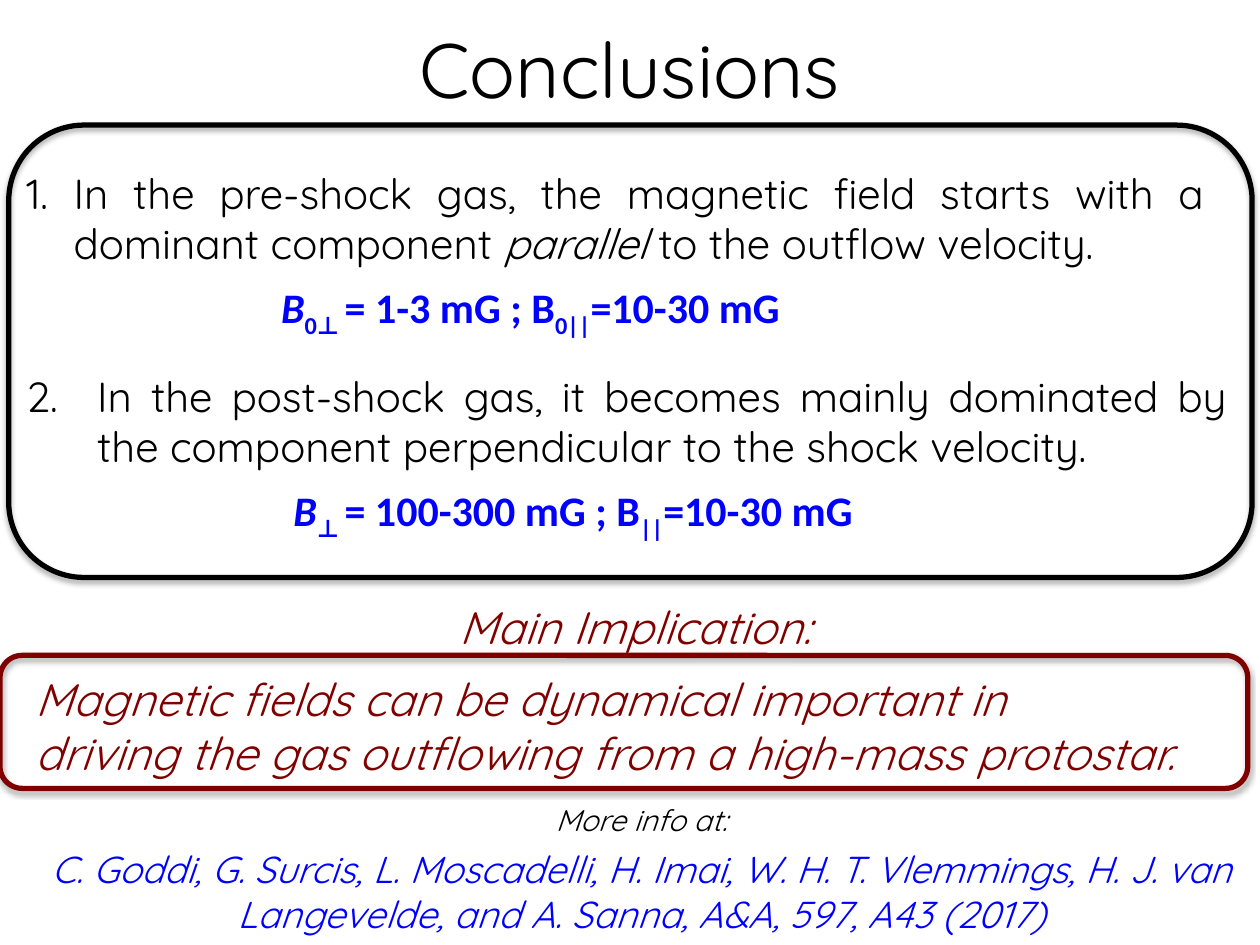
from lxml.etree import SubElement
from pptx import Presentation
from pptx.dml.color import RGBColor
from pptx.enum.shapes import MSO_SHAPE
from pptx.enum.text import MSO_ANCHOR, PP_ALIGN
from pptx.oxml import parse_xml
from pptx.oxml.ns import nsdecls, qn
from pptx.util import Pt

BLACK, BLUE, MAROON = "000000", "0000FF", "800000"


def color(value):
    return RGBColor.from_string(value)


def add_text(paragraph, text, size=24, font="Quicksand", fill=BLACK,
             bold=False, italic=False, subscript=False):
    run = paragraph.add_run()
    run.text = text
    run.font.size = Pt(size)
    run.font.name = font
    run.font.color.rgb = color(fill)
    run.font.bold = bold
    run.font.italic = italic
    if subscript:
        run.font._element.set("baseline", "-25000")


presentation = Presentation()
presentation.slide_width = Pt(720)
presentation.slide_height = Pt(540)
slide = presentation.slides.add_slide(presentation.slide_layouts[6])

# Text frames: left, top, width, height
frames = {}
for name, box in {
    "title": (0, -19.5, 720, 116),
    "pre-shock": (8, 92, 687, 65.5),
    "pre-shock field": (153.5, 157.5, 438.5, 36),
    "post-shock": (8, 208, 700, 65.5),
    "post-shock field": (160.5, 273.5, 438.5, 36),
    "reference": (13, 454.5, 707, 85.5),
    "implication": (13, 338.5, 700, 111.5),
}.items():
    frame = slide.shapes.add_textbox(*map(Pt, box)).text_frame
    frame.word_wrap = True
    frames[name] = frame

# Title
frames["title"].vertical_anchor = MSO_ANCHOR.MIDDLE
paragraph = frames["title"].paragraphs[0]
paragraph.alignment = PP_ALIGN.CENTER
add_text(paragraph, "Conclusions", size=44)

# Numbered conclusions
conclusions = [
    ("pre-shock", 27, [
        ("In the pre-shock gas, the magnetic field starts with a dominant component ", False),
        ("parallel", True),
        (" to the outflow velocity.", False)]),
    ("post-shock", 40.5, [
        ("In the post-shock gas, it becomes mainly dominated by the component "
         "perpendicular to the shock velocity.", False)]),
]
for number, (name, indent, parts) in enumerate(conclusions, start=1):
    paragraph = frames[name].paragraphs[0]
    paragraph.alignment = PP_ALIGN.JUSTIFY
    properties = paragraph._p.get_or_add_pPr()
    properties.set("marL", str(Pt(indent)))
    properties.set("indent", str(-Pt(indent)))
    SubElement(properties, qn("a:buAutoNum"), type="arabicPeriod", startAt=str(number))
    for text, italic in parts:
        add_text(paragraph, text, italic=italic)

# Field strengths
for name, across, values, along in [
    ("pre-shock field", "0⊥ ", "= 1-3 mG ; B", "0||"),
    ("post-shock field", "⊥ ", "= 100-300 mG ; B", "||"),
]:
    paragraph = frames[name].paragraphs[0]
    paragraph.alignment = PP_ALIGN.JUSTIFY
    for text, italic, subscript in [
        ("B", True, False), (across, False, True), (values, False, False),
        (along, False, True), ("=10-30 mG", False, False),
    ]:
        add_text(paragraph, text, font="Calibri", fill=BLUE, bold=True,
                 italic=italic, subscript=subscript)

# Reference and main implication
for name, text, size, fill, alignment, space in [
    ("reference", "More info at:", 17.1, BLACK, PP_ALIGN.CENTER, 0),
    ("reference", "C. Goddi, G. Surcis, L. Moscadelli, H. Imai, W. H. T. Vlemmings, "
     "H. J. van Langevelde, and A. Sanna, A&A, 597, A43 (2017)",
     21.4, BLUE, PP_ALIGN.CENTER, 5),
    ("implication", "Main Implication:", 26, MAROON, PP_ALIGN.CENTER, 0),
    ("implication", "Magnetic fields can be dynamical important in",
     26, MAROON, PP_ALIGN.LEFT, 10),
    ("implication", "driving the gas outflowing from a high-mass protostar.",
     26, MAROON, PP_ALIGN.LEFT, 0),
]:
    paragraph = frames[name].paragraphs[0]
    if paragraph.runs:
        paragraph = frames[name].add_paragraph()
    paragraph.alignment = alignment
    paragraph.space_before = Pt(space)
    add_text(paragraph, text, size=size, fill=fill, italic=True)

# Rounded frames with a soft shadow below
for box, line_color in [
    ((5, 71.5, 710.5, 258.5), BLACK),
    ((0, 374.5, 713, 76), MAROON),
]:
    shape = slide.shapes.add_shape(MSO_SHAPE.ROUNDED_RECTANGLE, *map(Pt, box))
    shape.fill.background()
    shape.line.color.rgb = color(line_color)
    shape.line.width = Pt(3)
    shape.shadow.inherit = False
    effects = shape._element.spPr.find(qn("a:effectLst"))
    effects.append(parse_xml(
        f'<a:outerShdw {nsdecls("a")} blurRad="{Pt(3.1)}" dist="{Pt(1.8)}" '
        'dir="5400000" rotWithShape="0"><a:srgbClr val="000000">'
        '<a:alpha val="35000"/></a:srgbClr></a:outerShdw>'))

presentation.save("out.pptx")
